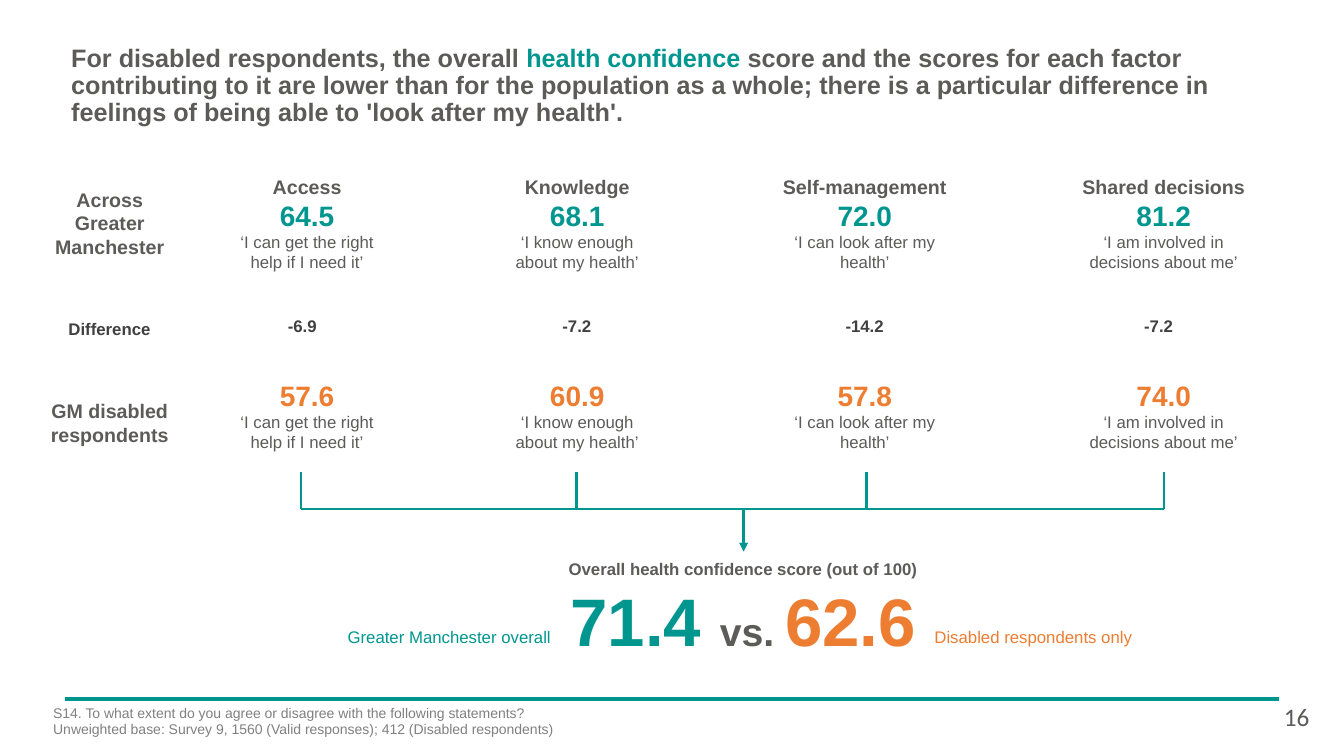
from lxml import etree
from pptx import Presentation
from pptx.dml.color import RGBColor
from pptx.enum.shapes import MSO_CONNECTOR, MSO_SHAPE
from pptx.enum.text import MSO_ANCHOR, MSO_AUTO_SIZE, PP_ALIGN
from pptx.oxml.ns import qn
from pptx.util import Pt

COLORS = {"grey": "5C5B5A", "teal": "009690", "orange": "ED7D31",
          "dark": "404040", "note": "808080", "white": "FFFFFF"}
FORMATS = {
    "title": {"size": Pt(18), "bold": True},
    "heading": {"size": Pt(14), "bold": True},
    "score": {"size": Pt(20), "bold": True},
    "quote": {"size": Pt(12), "bold": False},
    "strong": {"size": Pt(12), "bold": True},
    "total": {"size": Pt(48), "bold": True},
    "versus": {"size": Pt(28), "bold": True},
    "note": {"size": Pt(10), "bold": False},
    "page": {"size": Pt(18), "bold": False, "name": "Calibri"},
}

prs = Presentation()
prs.slide_width, prs.slide_height = Pt(960), Pt(540)
s = prs.slides.add_slide(prs.slide_layouts[6])


def add_text(x, y, w, h, paragraphs, align=PP_ALIGN.LEFT, wrap=True, sp=None):
    """Each paragraph is a list of (text, format, colour) runs."""
    sp = sp or s.shapes.add_textbox(Pt(x), Pt(y), Pt(w), Pt(h))
    tf = sp.text_frame
    tf.word_wrap = wrap
    tf.auto_size = MSO_AUTO_SIZE.NONE
    for i, runs in enumerate(paragraphs):
        p = tf.paragraphs[0] if i == 0 else tf.add_paragraph()
        p.alignment = align
        for text, style, color in runs:
            r = p.add_run()
            r.text = text
            for key, value in {"name": "Arial", **FORMATS[style]}.items():
                setattr(r.font, key, value)
            r.font.color.rgb = RGBColor.from_string(COLORS[color])
    return tf


def add_line(x1, y1, x2, y2, width=1.75, elbow=False):
    kind = MSO_CONNECTOR.ELBOW if elbow else MSO_CONNECTOR.STRAIGHT
    c = s.shapes.add_connector(kind, Pt(x1), Pt(y1), Pt(x2), Pt(y2))
    c.line.color.rgb = RGBColor.from_string(COLORS["teal"])
    c.line.width = Pt(width)
    if elbow:  # bend at the far end, then an arrowhead
        guides = c._element.spPr.find(qn("a:prstGeom")).find(qn("a:avLst"))
        etree.SubElement(guides, qn("a:gd"), name="adj1", fmla="val 100000")
        etree.SubElement(c.line._get_or_add_ln(), qn("a:tailEnd"), type="triangle")
    etree.SubElement(c._element.spPr, qn("a:effectLst"))


# Footer rule
add_line(46.3, 499.5, 913.7, 499.5, width=3)

# Title
title_box = (43.8, 23.8, 885, 70.6)
sp = s.shapes.add_shape(MSO_SHAPE.RECTANGLE, *map(Pt, title_box))
sp.shadow.inherit = False
sp.fill.solid()
sp.fill.fore_color.rgb = RGBColor.from_string(COLORS["white"])
sp.line.fill.background()
tf = add_text(*title_box, [[
    ("For disabled respondents, the overall ", "title", "grey"),
    ("health confidence ", "title", "teal"),
    ("score and the scores for each factor contributing to it are lower than for "
     "the population as a whole; there is a particular difference in feelings of "
     "being able to 'look after my health'.", "title", "grey")]], sp=sp)
tf.margin_left = tf.margin_right = tf.margin_bottom = Pt(7.2)
tf.margin_top = Pt(8.6)
tf.vertical_anchor = MSO_ANCHOR.TOP
tf.paragraphs[0].line_spacing = 0.9

# Row labels
for label, y, h in [("Across Greater Manchester", 130.5, 58.3),
                    ("GM disabled respondents", 281.5, 41)]:
    add_text(23.3, y, 110.2, h, [[(label, "heading", "grey")]], PP_ALIGN.CENTER)
add_text(41.8, 223.9, 73.4, 21.6, [[("Difference", "strong", "dark")]], wrap=False)

# Factor columns: scores, differences and bracket ticks
BRACKET_Y = 363.6
factors = [
    # name, overall, difference, disabled, quote, left, width, difference left, tick
    ("Access", "64.5", "-6.9", "57.6", "‘I can get the right help if I need it’",
     164.3, 110.2, 198.5, 215.2),
    ("Knowledge", "68.1", "-7.2", "60.9", "‘I know enough about my health’",
     360.5, 103.7, 394.6, 411.9),
    ("Self-management", "72.0", "-14.2", "57.8", "‘I can look after my health’",
     549.7, 136.1, 596.9, 619),
    ("Shared decisions", "81.2", "-7.2", "74.0", "‘I am involved in decisions about me’",
     763.2, 136.1, 810.2, 831.6),
]
for name, overall, diff, disabled, quote, x, w, diff_x, tick_x in factors:
    caption = [(quote, "quote", "grey")]
    add_text(x, 121.3, w, 77.8, [[(name, "heading", "grey")],
                                 [(overall, "score", "teal")], caption], PP_ALIGN.CENTER)
    add_text(diff_x, 221.8, 7 * len(diff) + 7, 21.6, [[(diff, "strong", "dark")]],
             wrap=False)
    add_text(x, 266.5, w, 60.5, [[(disabled, "score", "orange")], caption],
             PP_ALIGN.CENTER)
    add_line(tick_x, BRACKET_Y, tick_x, 337.5)

# Bracket and arrow to the overall score
for end in (factors[0], factors[-1]):
    add_line(end[-1], BRACKET_Y, 531.2, 393.8, elbow=True)

# Overall score
add_text(263, 395.7, 535.7, 79.9, [
    [("Overall health confidence score (out of 100)", "strong", "grey")],
    [("71.4 ", "total", "teal"), ("vs. ", "versus", "grey"),
     ("62.6", "total", "orange")]], PP_ALIGN.CENTER)
for label, x, color in [("Greater Manchester overall", 241.2, "teal"),
                        ("Disabled respondents only", 660.4, "orange")]:
    add_text(x, 444.2, 160.6, 21.6, [[(label, "quote", color)]])

# Footnote and page number
add_text(30.9, 499.4, 862.6, 40.3, [
    [("S14. To what extent do you agree or disagree with the following statements?",
      "note", "note")],
    [("Unweighted base: Survey 9, 1560 (Valid responses); 412 (Disabled respondents)",
      "note", "note")]])
add_text(910.1, 497.5, 38.2, 28.8, [[("16", "page", "grey")]])

prs.save("out.pptx")
